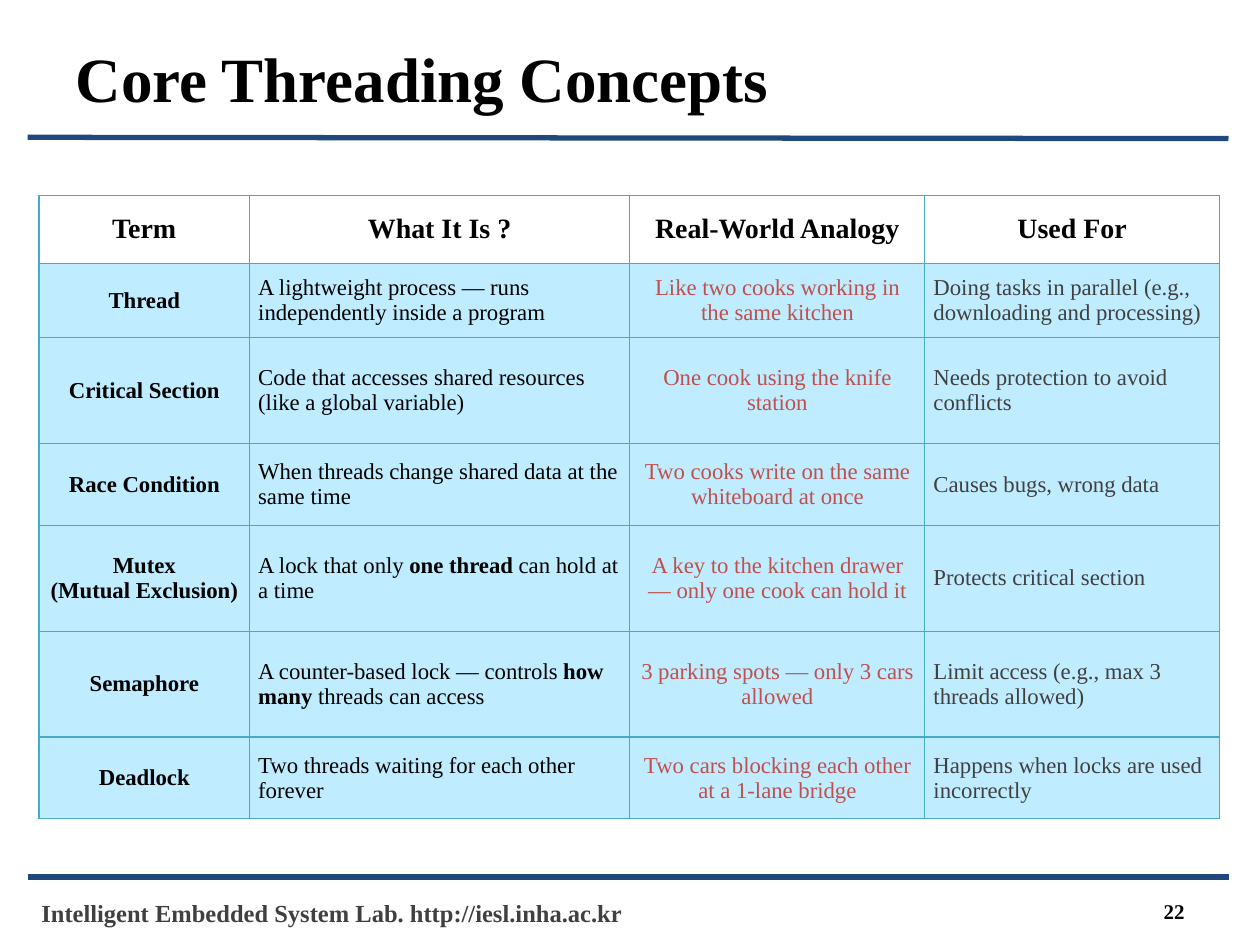
from lxml import etree
from pptx import Presentation
from pptx.dml.color import RGBColor
from pptx.enum import shapes, text
from pptx.oxml.ns import qn
from pptx.util import Inches, Pt

FONT = "Times New Roman"
BLACK = RGBColor(0x00, 0x00, 0x00)
WHITE = RGBColor(0xFF, 0xFF, 0xFF)
GRAY = RGBColor(0x40, 0x40, 0x40)
RED = RGBColor(0xC0, 0x50, 0x4D)
NAVY = RGBColor(0x1F, 0x49, 0x7D)
SKY = RGBColor(0xBF, 0xEC, 0xFF)
TEAL = RGBColor(0x46, 0xAA, 0xC5)
LEFT, CENTER, RIGHT = text.PP_ALIGN.LEFT, text.PP_ALIGN.CENTER, text.PP_ALIGN.RIGHT

COLUMN_WIDTHS = [1.67, 3.02, 2.34, 2.34]
ROW_HEIGHTS = [0.54, 0.59, 0.84, 0.65, 0.84, 0.84, 0.65]
# Alignment, colour and boldness of each body column
COLUMN_STYLES = [(CENTER, BLACK, True), (LEFT, BLACK, False),
                 (CENTER, RED, False), (LEFT, GRAY, False)]
HEADER_STYLE = (CENTER, BLACK, True)
# A pair of ** encloses bold words
CONCEPTS = [
    ("Term", "What It Is ?", "Real-World Analogy", "Used For"),
    ("Thread", "A lightweight process — runs independently inside a program",
     "Like two cooks working in the same kitchen",
     "Doing tasks in parallel (e.g., downloading and processing)"),
    ("Critical Section", "Code that accesses shared resources (like a global variable)",
     "One cook using the knife station", "Needs protection to avoid conflicts"),
    ("Race Condition", "When threads change shared data at the same time",
     "Two cooks write on the same whiteboard at once", "Causes bugs, wrong data"),
    ("Mutex\n(Mutual Exclusion)", "A lock that only **one thread** can hold at a time",
     "A key to the kitchen drawer — only one cook can hold it", "Protects critical section"),
    ("Semaphore", "A counter-based lock — controls **how many** threads can access",
     "3 parking spots — only 3 cars allowed", "Limit access (e.g., max 3 threads allowed)"),
    ("Deadlock", "Two threads waiting for each other forever",
     "Two cars blocking each other at a 1-lane bridge",
     "Happens when locks are used incorrectly"),
]


def write(tf, content, size, align=LEFT, color=BLACK, bold=True):
    """Fill a text frame: one paragraph a line, one run for each change of weight."""
    for i, line in enumerate(content.split("\n")):
        p = tf.add_paragraph() if i else tf.paragraphs[0]
        p.alignment = align
        for j, part in enumerate(line.split("**")):
            r = p.add_run()
            r.text = part
            r.font.name, r.font.size = FONT, Pt(size)
            r.font.bold = bold or j % 2 == 1
            r.font.color.rgb = color


def add_title(slide, x, y, w, h):
    sp = slide.shapes.title
    sp.left, sp.top, sp.width, sp.height = (Inches(v) for v in (x, y, w, h))
    sp.text_frame.vertical_anchor = text.MSO_ANCHOR.MIDDLE
    write(sp.text_frame, "Core Threading Concepts", 36)


def add_rule(slide, x, y, w, drop=0):
    line = slide.shapes.add_connector(shapes.MSO_CONNECTOR.STRAIGHT, Inches(x), Inches(y),
                                      Inches(x + w), Inches(y + drop))
    line.line.color.rgb, line.line.width = NAVY, Pt(3)
    etree.SubElement(line._element.spPr, qn("a:effectLst"))


def add_label(slide, x, y, w, h, content, size, **style):
    tf = slide.shapes.add_textbox(Inches(x), Inches(y), Inches(w), Inches(h)).text_frame
    tf.word_wrap = True
    tf.vertical_anchor = text.MSO_ANCHOR.MIDDLE
    write(tf, content, size, **style)


def add_footer(slide, x, y, w):
    add_rule(slide, x, y, w)
    add_label(slide, x + 0.01, y + 0.11, 5, 0.34,
              "Intelligent Embedded System Lab. http://iesl.inha.ac.kr", 14, color=GRAY)
    add_label(slide, x + w - 2.58, y + 0.11, 2.33, 0.32, "22", 12, align=RIGHT)


def set_borders(cell):
    tc_pr = cell._tc.get_or_add_tcPr()
    for side in ("lnL", "lnR", "lnT", "lnB"):
        ln = etree.SubElement(tc_pr, qn(f"a:{side}"), w=str(Pt(0.75)))
        fill = etree.SubElement(ln, qn("a:solidFill"))
        etree.SubElement(fill, qn("a:srgbClr"), val=str(TEAL))


def add_concept_table(slide, x, y):
    table = slide.shapes.add_table(
        len(ROW_HEIGHTS), len(COLUMN_WIDTHS), Inches(x), Inches(y),
        Inches(sum(COLUMN_WIDTHS)), Inches(sum(ROW_HEIGHTS))).table
    for column, width in zip(table.columns, COLUMN_WIDTHS):
        column.width = Inches(width)
    for i, (row, height) in enumerate(zip(table.rows, ROW_HEIGHTS)):
        row.height = Inches(height)
        for cell, content, style in zip(row.cells, CONCEPTS[i], COLUMN_STYLES):
            set_borders(cell)
            cell.fill.solid()
            cell.fill.fore_color.rgb = SKY if i else WHITE
            cell.vertical_anchor = text.MSO_ANCHOR.MIDDLE
            cell.margin_left = cell.margin_right = Inches(0.07)
            cell.margin_top = cell.margin_bottom = Inches(0.04)
            write(cell.text_frame, content, 13 if i else 16, *(style if i else HEADER_STYLE))


def main():
    prs = Presentation()
    prs.slide_width, prs.slide_height = Inches(10), Inches(7.5)
    slide = prs.slides.add_slide(prs.slide_layouts[5])
    add_title(slide, 0.5, 0.22, 9, 0.79)
    add_rule(slide, 0.22, 1.09, 9.53, drop=0.01)
    add_concept_table(slide, 0.31, 1.55)
    add_footer(slide, 0.22, 6.96, 9.53)
    prs.save("out.pptx")


if __name__ == "__main__":
    main()
